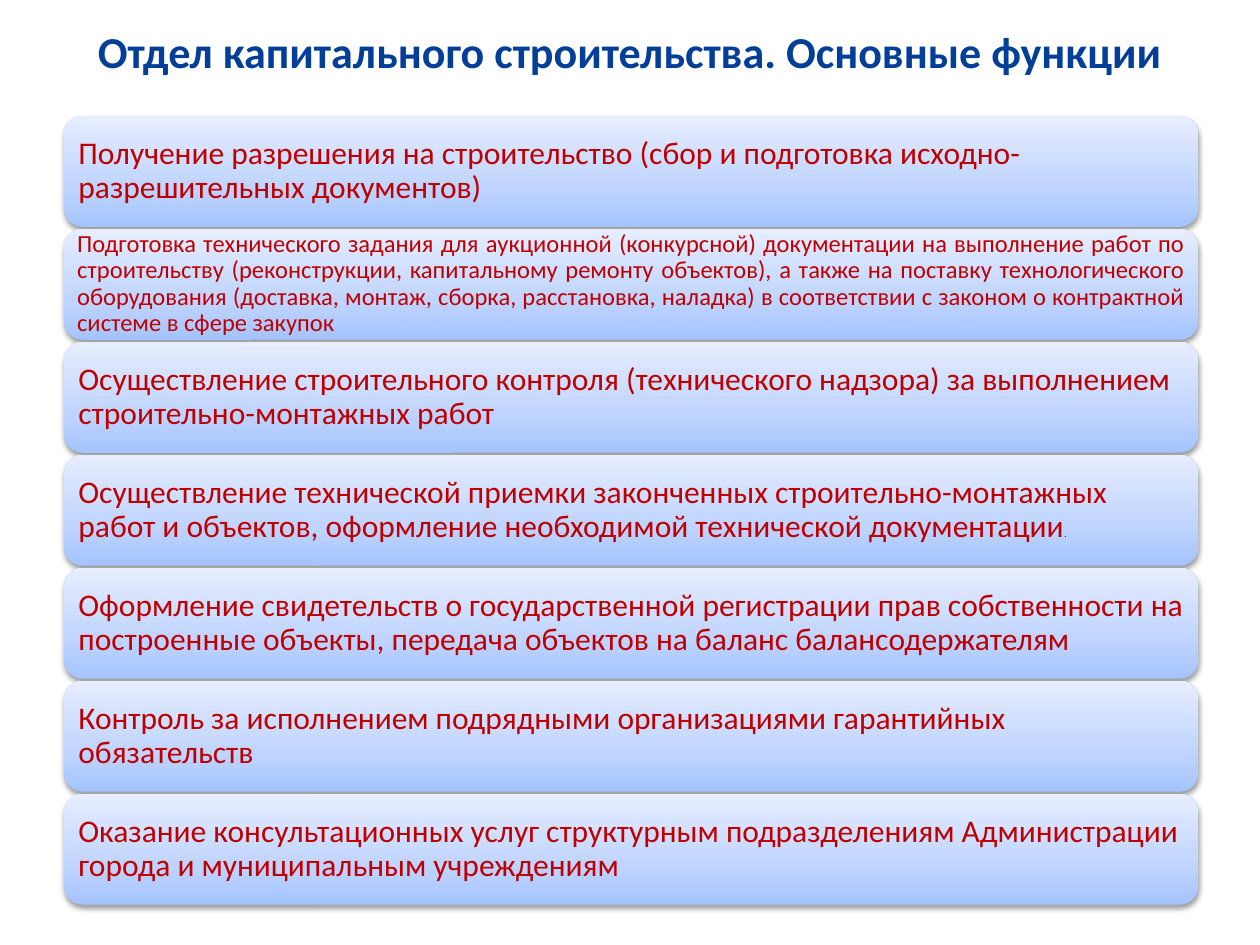
from copy import deepcopy

from lxml.etree import SubElement
from pptx import Presentation
from pptx.dml.color import RGBColor
from pptx.enum.shapes import MSO_SHAPE
from pptx.enum.text import MSO_ANCHOR, PP_ALIGN
from pptx.oxml.ns import qn
from pptx.util import Inches, Pt

NAVY = RGBColor(0x03, 0x3E, 0x99)
RED = RGBColor(0xC0, 0x00, 0x00)
BLACK = RGBColor(0x00, 0x00, 0x00)
GRADIENT = [
    (0, RGBColor(0xA4, 0xC4, 0xFF)),
    (0.35, RGBColor(0xBF, 0xD4, 0xFF)),
    (1, RGBColor(0xE6, 0xEE, 0xFF)),
]
FONT = "Calibri"

LEFT, WIDTH, HEIGHT = 0.51, 9, 0.88
FIRST_TOP, LAST_TOP = 0.92, 6.3

# Text, size, alignment, inset
FUNCTIONS = [
    ("Получение разрешения на строительство (сбор и подготовка исходно-разрешительных документов)",
     18, PP_ALIGN.LEFT, 0.07),
    ("Подготовка технического задания для аукционной (конкурсной) документации на выполнение "
     "работ по строительству (реконструкции, капитальному ремонту объектов), а также на поставку "
     "технологического оборудования (доставка, монтаж, сборка, расстановка, наладка) в "
     "соответствии с законом о контрактной системе в сфере закупок",
     14, PP_ALIGN.JUSTIFY, 0.06),
    ("Осуществление строительного контроля (технического надзора) за выполнением "
     "строительно-монтажных работ", 18, PP_ALIGN.LEFT, 0.07),
    ("Осуществление технической приемки законченных строительно-монтажных работ и объектов, "
     "оформление необходимой технической документации", 18, PP_ALIGN.LEFT, 0.07),
    ("Оформление свидетельств о государственной регистрации прав собственности на построенные "
     "объекты, передача объектов на баланс балансодержателям", 18, PP_ALIGN.LEFT, 0.07),
    ("Контроль за исполнением подрядными организациями гарантийных обязательств",
     18, PP_ALIGN.LEFT, 0.07),
    ("Оказание консультационных услуг структурным подразделениям Администрации города и "
     "муниципальным учреждениям", 18, PP_ALIGN.LEFT, 0.07),
]
SMALL_STOP_ROW = 3  # this row ends with a tiny black full stop


def format_span(span, size, color, bold=False):
    span.font.name = FONT
    span.font.size = Pt(size)
    span.font.bold = bold
    span.font.color.rgb = color


def paint_box(box):
    """Give the box its three-stop gradient, no outline and a soft shadow."""
    box.fill.gradient()
    box.fill.gradient_angle = 90
    properties = box.element.spPr
    stop_list = properties.find(".//" + qn("a:gsLst"))
    stop_list.insert(1, deepcopy(stop_list[0]))
    for stop, (position, color) in zip(box.fill.gradient_stops, GRADIENT):
        stop.position = position
        stop.color.rgb = color
    box.line.fill.background()

    box.shadow.inherit = False
    shadow = SubElement(properties.find(qn("a:effectLst")), qn("a:outerShdw"),
                        blurRad=str(Pt(3.1)), dist=str(Pt(1.6)), dir="5400000", rotWithShape="0")
    shade = SubElement(shadow, qn("a:srgbClr"), val="000000")
    SubElement(shade, qn("a:alpha"), val="38000")


deck = Presentation()
deck.slide_width, deck.slide_height = Inches(10), Inches(7.5)
page = deck.slides.add_slide(deck.slide_layouts[5])

title = page.shapes.title
title.left, title.top = Inches(0.5), Inches(0.13)
title.width, title.height = Inches(9), Inches(0.55)
title.text_frame.text = "Отдел капитального строительства. Основные функции"
title.text_frame.vertical_anchor = MSO_ANCHOR.MIDDLE
heading = title.text_frame.paragraphs[0]
heading.alignment = PP_ALIGN.CENTER
format_span(heading.runs[0], 25.2, NAVY, bold=True)

step = (LAST_TOP - FIRST_TOP) / (len(FUNCTIONS) - 1)
for row, (text, size, alignment, inset) in enumerate(FUNCTIONS):
    box = page.shapes.add_shape(
        MSO_SHAPE.ROUNDED_RECTANGLE,
        Inches(LEFT), Inches(FIRST_TOP + row * step), Inches(WIDTH), Inches(HEIGHT))
    paint_box(box)

    frame = box.text_frame
    frame.word_wrap = True
    frame.vertical_anchor = MSO_ANCHOR.MIDDLE
    frame.margin_left = frame.margin_right = Inches(inset)
    frame.margin_top = frame.margin_bottom = Inches(inset)
    frame.text = text
    para = frame.paragraphs[0]
    para.alignment = alignment
    para.line_spacing = 0.9
    format_span(para.runs[0], size, RED)
    if row == SMALL_STOP_ROW:
        full_stop = para.add_run()
        full_stop.text = "."
        format_span(full_stop, 5, BLACK)

deck.save("out.pptx")
